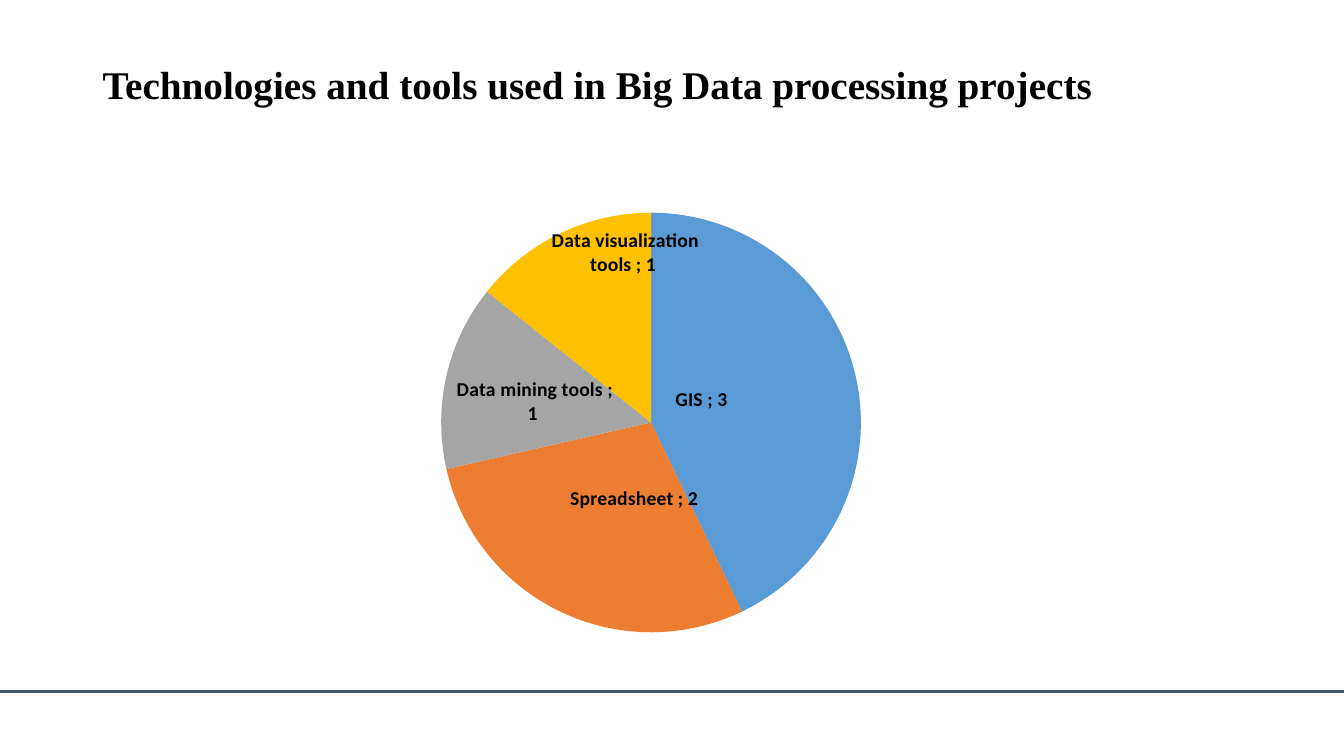
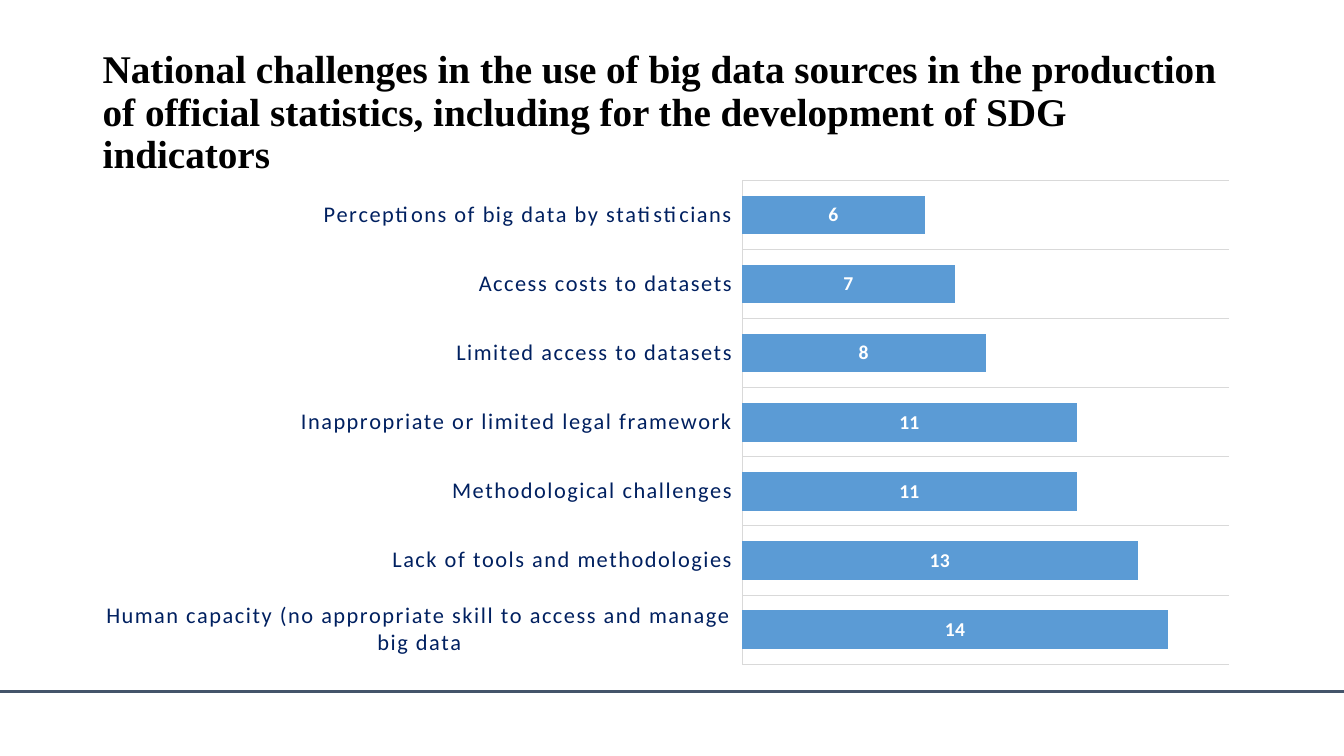
from dataclasses import dataclass

from lxml import etree
from pptx import Presentation
from pptx.chart.data import CategoryChartData
from pptx.dml.color import RGBColor
from pptx.enum.chart import XL_CHART_TYPE as ChartType
from pptx.enum.chart import XL_LABEL_POSITION as LabelPosition
from pptx.enum.chart import XL_TICK_LABEL_POSITION as TickLabels
from pptx.enum.chart import XL_TICK_MARK as TickMark
from pptx.enum.text import MSO_ANCHOR as Anchor
from pptx.oxml import parse_xml
from pptx.oxml.ns import nsdecls, qn
from pptx.util import Inches, Pt


@dataclass(frozen=True)
class Theme:
    title_font: str = "Times New Roman"
    chart_font: str = "Calibri"
    title_size: int = 28
    axis_size: int = 16
    label_size: int = 14
    chart_size: int = 10
    ink: str = "000000"
    white: str = "FFFFFF"
    navy: str = "002060"
    rule: str = "44546A"
    grid: str = "D9D9D9"
    blue: str = "5B9BD5"
    slices: tuple = ("5B9BD5", "ED7D31", "A5A5A5", "FFC000")


THEME = Theme()
WIDTH, HEIGHT = 13.33, 7.5
MARGIN, CONTENT_WIDTH = 0.92, 11.5
FOOTER_Y = 6.86

TOOLS = {
    " GIS ": 3,
    "Spreadsheet ": 2,
    " Data mining tools ": 1,
    " Data visualization tools ": 1,
}
# Label shifts by slice, as fractions of the chart size
LABEL_SHIFTS = {0: (-0.16, 0.02), 1: (0.01, -0.18), 3: (-0.02, -0.02)}
CHALLENGES = {
    "Human capacity (no appropriate skill to access and manage big data": 14,
    "Lack of tools and methodologies": 13,
    "Methodological challenges": 11,
    "Inappropriate or limited legal framework": 11,
    "Limited access to datasets": 8,
    "Access costs to datasets": 7,
    "Perceptions of big data by statisticians": 6,
}


def style_font(font, name, size, color, bold=False):
    font.name, font.size, font.bold = name, Pt(size), bold
    font.color.rgb = RGBColor.from_string(color)


def style_line(line, color, width):
    line.color.rgb = RGBColor.from_string(color)
    line.width = Pt(width)


def fill_solid(fill, color):
    fill.solid()
    fill.fore_color.rgb = RGBColor.from_string(color)


# Slide frame: title and footer rule
def add_page(deck, title, title_height):
    page = deck.slides.add_slide(deck.slide_layouts[6])
    fill_solid(page.background.fill, THEME.white)

    rule = page.shapes.add_connector(
        1, 0, Inches(FOOTER_Y), Inches(WIDTH), Inches(FOOTER_Y))
    style_line(rule.line, THEME.rule, 1.5)
    etree.SubElement(rule.element.spPr, qn("a:effectLst"))

    box = page.shapes.add_textbox(
        Inches(MARGIN), Inches(0.4), Inches(CONTENT_WIDTH), Inches(title_height))
    box.text_frame.word_wrap = True
    box.text_frame.vertical_anchor = Anchor.MIDDLE
    para = box.text_frame.paragraphs[0]
    para.line_spacing = 0.9
    span = para.add_run()
    span.text = title
    style_font(span.font, THEME.title_font, THEME.title_size, THEME.ink, True)
    return page


# Chart helpers
def layout_xml(**places):
    values = "".join(f'<c:{key} val="{value}"/>' for key, value in places.items())
    return parse_xml(
        f'<c:layout {nsdecls("c")}><c:manualLayout>{values}'
        "</c:manualLayout></c:layout>")


def place_plot(chart, x, y, w, h):
    area = chart.element.xpath(".//c:plotArea")[0]
    for old in area.findall(qn("c:layout")):
        area.remove(old)
    area.insert(0, layout_xml(layoutTarget="inner", xMode="edge", yMode="edge",
                              x=x, y=y, w=w, h=h))


def add_chart(page, kind, values, left, top, width, height):
    data = CategoryChartData()
    data.categories = list(values)
    data.add_series("Series 1", list(values.values()))
    chart = page.shapes.add_chart(
        kind, Inches(left), Inches(top), Inches(width), Inches(height), data).chart
    chart.has_legend = chart.has_title = False
    style_font(chart.font, THEME.chart_font, THEME.chart_size, THEME.ink)
    return chart


def style_labels(labels, color):
    style_font(labels.font, THEME.chart_font, THEME.label_size, color, True)


def add_separators(chart):
    for size_flag in chart.element.xpath(".//c:ser//c:showBubbleSize"):
        separator = etree.Element(qn("c:separator"))
        separator.text = "; "
        size_flag.addnext(separator)


def add_pie(page):
    chart = add_chart(page, ChartType.PIE, TOOLS, 2.63, 1.32, 7.58, 5.27)
    place_plot(chart, 0.23, 0.15, 0.55, 0.79)
    series = chart.plots[0].series[0]
    for index, color in enumerate(THEME.slices):
        fill_solid(series.points[index].format.fill, color)

    labels = series.data_labels
    style_labels(labels, THEME.ink)
    labels.show_value = labels.show_category_name = True
    labels.position = LabelPosition.INSIDE_END

    # Shift single labels away from the rim
    for index in LABEL_SHIFTS:
        label = series.points[index].data_label
        style_labels(label, THEME.ink)
        label.position = LabelPosition.INSIDE_END
    for element in chart.element.xpath(".//c:dLbl"):
        marker = element.find(qn("c:idx"))
        x, y = LABEL_SHIFTS[int(marker.get("val"))]
        marker.addnext(layout_xml(x=x, y=y))
        element.find(qn("c:showCatName")).set("val", "1")
    add_separators(chart)


def add_bars(page):
    chart = add_chart(page, ChartType.BAR_STACKED, CHALLENGES,
                      MARGIN, 1.69, CONTENT_WIDTH, 4.95)
    place_plot(chart, 0.56, 0.02, 0.42, 0.97)
    plot = chart.plots[0]
    plot.gap_width, plot.overlap = 79, 100
    plot.vary_by_categories = False
    series = plot.series[0]
    fill_solid(series.format.fill, THEME.blue)
    style_labels(series.data_labels, THEME.white)
    series.data_labels.show_value = True
    series.data_labels.position = LabelPosition.CENTER

    # Axes
    names = chart.category_axis
    names.major_tick_mark = names.minor_tick_mark = TickMark.NONE
    names.tick_label_position = TickLabels.LOW
    names.has_major_gridlines = True
    for line in (names.format.line, names.major_gridlines.format.line):
        style_line(line, THEME.grid, 0.75)
    style_font(names.tick_labels.font, THEME.chart_font, THEME.axis_size, THEME.navy)
    chart.element.xpath(".//c:catAx/c:txPr//a:defRPr")[0].set("spc", "120")
    scale = chart.value_axis
    scale.minimum_scale, scale.maximum_scale = 0, 16
    scale.has_major_gridlines = scale.visible = False


def main():
    deck = Presentation()
    deck.slide_width, deck.slide_height = Inches(WIDTH), Inches(HEIGHT)
    add_pie(add_page(
        deck, "Technologies and tools used in Big Data processing projects", 0.92))
    add_bars(add_page(
        deck,
        "National challenges in the use of big data sources in the production "
        "of official statistics, including for the development of SDG indicators",
        1.45))
    deck.save("out.pptx")


if __name__ == "__main__":
    main()
